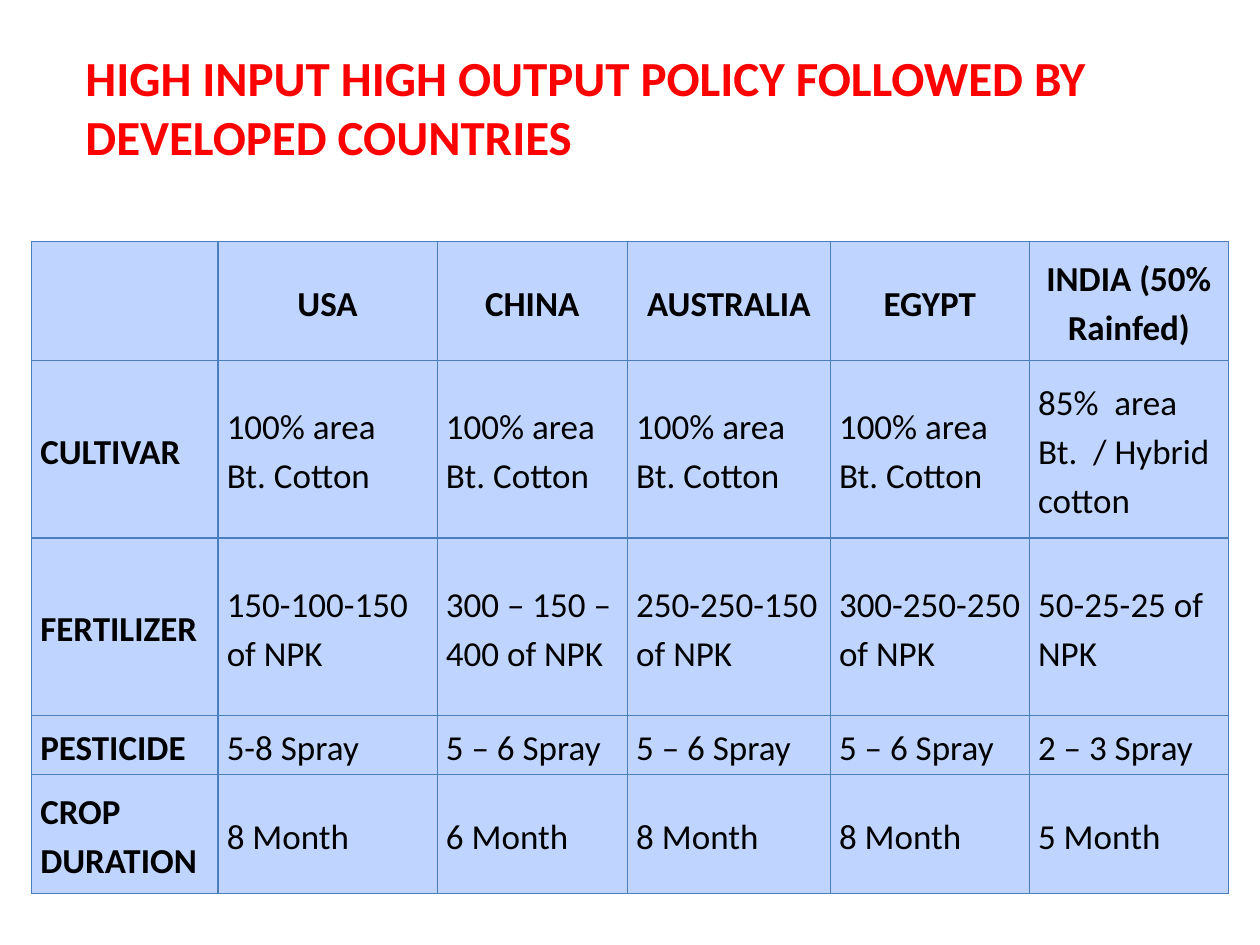
from lxml.etree import SubElement
from pptx import Presentation
from pptx.dml.color import RGBColor
from pptx.enum.text import MSO_ANCHOR, MSO_AUTO_SIZE, PP_ALIGN
from pptx.oxml.ns import qn
from pptx.util import Inches, Pt

TITLE = "HIGH INPUT HIGH OUTPUT POLICY FOLLOWED BY DEVELOPED COUNTRIES"
ROWS = [
    ["", "USA", "CHINA", "AUSTRALIA", "EGYPT", "INDIA (50% Rainfed)"],
    ["CULTIVAR", "100% area  Bt. Cotton", "100% area Bt. Cotton", "100% area Bt. Cotton",
     "100% area Bt. Cotton", "85%  area Bt.  / Hybrid cotton"],
    ["FERTILIZER", "150-100-150 of NPK", "300 – 150 – 400 of NPK", "250-250-150 of NPK",
     "300-250-250 of NPK", "50-25-25 of NPK"],
    ["PESTICIDE", "5-8 Spray", "5 – 6 Spray", "5 – 6 Spray", "5 – 6 Spray", "2 – 3 Spray"],
    ["CROP DURATION", "8 Month", "6 Month", "8 Month", "8 Month", "5 Month"],
]
COL_WIDTHS = [1.48, 1.74, 1.51, 1.61, 1.58, 1.58]
ROW_HEIGHTS = [0.94, 1.41, 1.41, 0.47, 0.94]
COLORS = {"title": "FF0000", "text": "000000", "cell": "BFD5FF", "border": "4B7EBC"}
FONT = "Calibri"


def add_run(p, text, size, color, bold):
    r = p.add_run()
    r.text = text
    r.font.name = FONT
    r.font.size = Pt(size)
    r.font.bold = bold
    r.font.color.rgb = RGBColor.from_string(COLORS[color])


def set_borders(cell):
    tc_pr = cell._tc.get_or_add_tcPr()
    for i, side in enumerate(("lnL", "lnR", "lnT", "lnB")):
        ln = tc_pr.makeelement(qn(f"a:{side}"), {"w": str(Pt(0.75))})
        fill = SubElement(ln, qn("a:solidFill"))
        SubElement(fill, qn("a:srgbClr"), val=COLORS["border"])
        tc_pr.insert(i, ln)  # borders come before the fill


def fill_cell(cell, text, is_header, is_label):
    cell.fill.solid()
    cell.fill.fore_color.rgb = RGBColor.from_string(COLORS["cell"])
    set_borders(cell)
    cell.vertical_anchor = MSO_ANCHOR.MIDDLE
    cell.margin_left = cell.margin_right = Inches(0.07)
    cell.margin_top = cell.margin_bottom = 0
    if text:
        p = cell.text_frame.paragraphs[0]
        p.alignment = PP_ALIGN.CENTER if is_header else PP_ALIGN.LEFT
        p.line_spacing = 1.15
        add_run(p, text, 20, "text", is_header or is_label)


def main():
    prs = Presentation()
    prs.slide_width, prs.slide_height = Inches(10), Inches(7.5)
    s = prs.slides.add_slide(prs.slide_layouts[6])

    # Country comparison table
    frame = s.shapes.add_table(len(ROWS), len(COL_WIDTHS), Inches(0.25), Inches(1.92),
                               Inches(sum(COL_WIDTHS)), Inches(sum(ROW_HEIGHTS)))
    table = frame.table
    for col, width in zip(table.columns, COL_WIDTHS):
        col.width = Inches(width)
    for row, height in zip(table.rows, ROW_HEIGHTS):
        row.height = Inches(height)
    for i, texts in enumerate(ROWS):
        for j, text in enumerate(texts):
            fill_cell(table.cell(i, j), text, i == 0, j == 0)

    # Title
    sp = s.shapes.add_textbox(Inches(0.58), Inches(0.33), Inches(8.5), Inches(1.04))
    tf = sp.text_frame
    tf.word_wrap = True
    tf.auto_size = MSO_AUTO_SIZE.SHAPE_TO_FIT_TEXT
    add_run(tf.paragraphs[0], TITLE, 28, "title", True)

    prs.save("out.pptx")


if __name__ == "__main__":
    main()
